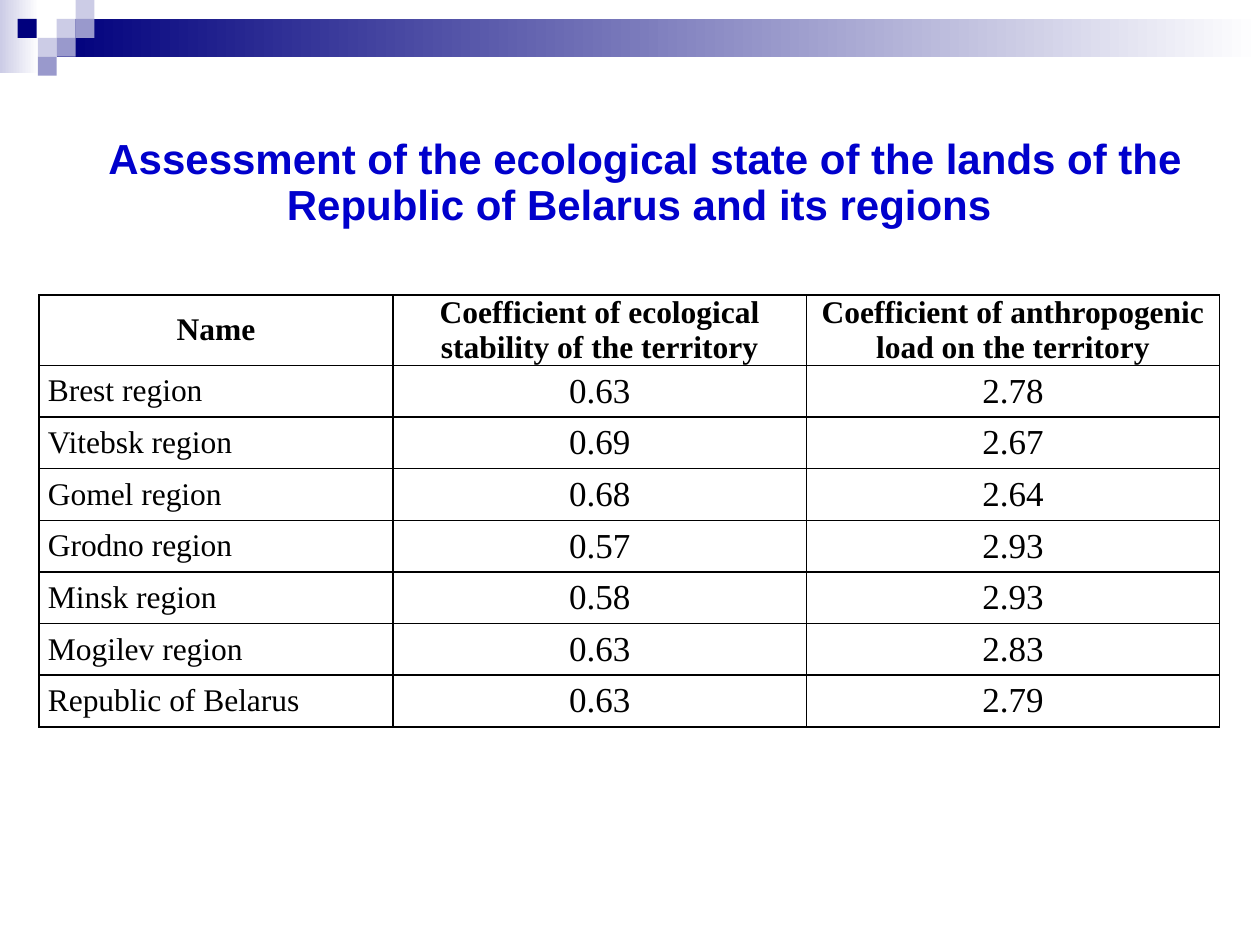
from typing import NamedTuple

from lxml import etree
from pptx import Presentation
from pptx.dml.color import RGBColor
from pptx.enum.shapes import MSO_SHAPE
from pptx.enum.text import MSO_ANCHOR, MSO_AUTO_SIZE, PP_ALIGN
from pptx.oxml.ns import qn
from pptx.util import Inches, Pt

RECT = MSO_SHAPE.RECTANGLE
MIDDLE = MSO_ANCHOR.MIDDLE
NO_AUTOFIT = MSO_AUTO_SIZE.NONE
LEFT, CENTER = PP_ALIGN.LEFT, PP_ALIGN.CENTER
TITLE_ONLY = 5

COLORS = {
    "navy": "00007D",
    "lilac": "9999CC",
    "pale": "CCCCE6",
    "white": "FFFFFF",
    "title": "0000CC",
    "black": "000000",
}


class Block(NamedTuple):
    left: float
    top: float
    width: float
    height: float
    colors: tuple[str, ...]  # one colour is solid, two run left to right


UNIT = 0.15
SQUARES = [  # left, top, colour
    (0.45, 0.15, "pale"),
    (0.6, 0, "pale"),
    (0.6, 0.15, "lilac"),
    (0.3, 0.3, "pale"),
    (0.14, 0.15, "navy"),
    (0.45, 0.3, "lilac"),
    (0.3, 0.45, "lilac"),
]
BLOCKS = [
    Block(0, 0, 0.31, 0.58, ("pale", "white")),
    Block(0.45, 0.15, 9.55, 0.3, ("navy", "white")),
] + [Block(left, top, UNIT, UNIT, (color,)) for left, top, color in SQUARES]

TITLE = ("Assessment of the ecological state of the lands of the "
         "Republic of Belarus and its regions ")
TABLE_ROWS = [
    ("Name", "Coefficient of ecological stability of the territory",
     "Coefficient of anthropogenic load on the territory"),
    ("Brest region", "0.63", "2.78"),
    ("Vitebsk region", "0.69", "2.67"),
    ("Gomel region", "0.68", "2.64"),
    ("Grodno region", "0.57", "2.93"),
    ("Minsk region", "0.58", "2.93"),
    ("Mogilev region", "0.63", "2.83"),
    ("Republic of Belarus", "0.63", "2.79"),
]
COL_WIDTHS = [2.81, 3.28, 3.28]
ROW_HEIGHTS = [0.56] + [0.41] * (len(TABLE_ROWS) - 1)
CELL_FORMAT = {
    "margin_left": Inches(0.07),
    "margin_right": Inches(0.07),
    "margin_top": 0,
    "margin_bottom": 0,
    "vertical_anchor": MIDDLE,
}


def rgb(name: str) -> RGBColor:
    return RGBColor.from_string(COLORS[name])


def write(p, text: str, align, color: str, **font_format) -> None:
    p.alignment = align
    r = p.add_run()
    r.text = text
    r.font.color.rgb = rgb(color)
    for name, value in font_format.items():
        setattr(r.font, name, value)


def add_block(slide, block: Block) -> None:
    sp = slide.shapes.add_shape(RECT, *(Inches(v) for v in block[:4]))
    sp.shadow.inherit = False
    sp.line.fill.background()
    if len(block.colors) == 1:
        sp.fill.solid()
        sp.fill.fore_color.rgb = rgb(block.colors[0])
        return
    sp.fill.gradient()
    sp.fill.gradient_angle = 0
    for stop, color in zip(sp.fill.gradient_stops, block.colors):
        stop.color.rgb = rgb(color)


def add_title(slide) -> None:
    title = slide.shapes.title
    title.left, title.top = Inches(0.59), Inches(0.94)
    title.width, title.height = Inches(9.06), Inches(1.04)
    tf = title.text_frame
    tf.auto_size = NO_AUTOFIT
    tf.word_wrap = True
    tf.vertical_anchor = MIDDLE
    p = tf.paragraphs[0]
    p.line_spacing = 0.9
    write(p, TITLE, CENTER, "title", name="Arial", size=Pt(24), bold=True)


def add_borders(cell) -> None:
    tc_pr = cell._tc.get_or_add_tcPr()
    for side in ("lnL", "lnR", "lnT", "lnB"):
        ln = etree.SubElement(tc_pr, qn(f"a:{side}"), w=str(Pt(1)))
        fill = etree.SubElement(ln, qn("a:solidFill"))
        etree.SubElement(fill, qn("a:srgbClr"), val=COLORS["black"])


def add_region_table(slide) -> None:
    table = slide.shapes.add_table(
        len(TABLE_ROWS), len(COL_WIDTHS), Inches(0.31), Inches(2.34),
        Inches(sum(COL_WIDTHS)), Inches(sum(ROW_HEIGHTS))).table
    table.first_row = table.horz_banding = False
    for column, width in zip(table.columns, COL_WIDTHS):
        column.width = Inches(width)
    for row, height in zip(table.rows, ROW_HEIGHTS):
        row.height = Inches(height)

    for i, texts in enumerate(TABLE_ROWS):
        for j, text in enumerate(texts):
            cell = table.cell(i, j)
            for name, value in CELL_FORMAT.items():
                setattr(cell, name, value)
            add_borders(cell)
            cell.fill.background()
            is_header, is_name = i == 0, j == 0
            write(cell.text_frame.paragraphs[0], text,
                  LEFT if is_name and not is_header else CENTER, "black",
                  name="Times New Roman", bold=is_header,
                  size=Pt(18 if is_header or is_name else 20))


def main() -> None:
    prs = Presentation()
    prs.slide_width, prs.slide_height = Inches(10), Inches(7.5)
    slide = prs.slides.add_slide(prs.slide_layouts[TITLE_ONLY])
    for block in BLOCKS:
        add_block(slide, block)
    add_title(slide)
    add_region_table(slide)
    prs.save("out.pptx")


if __name__ == "__main__":
    main()
